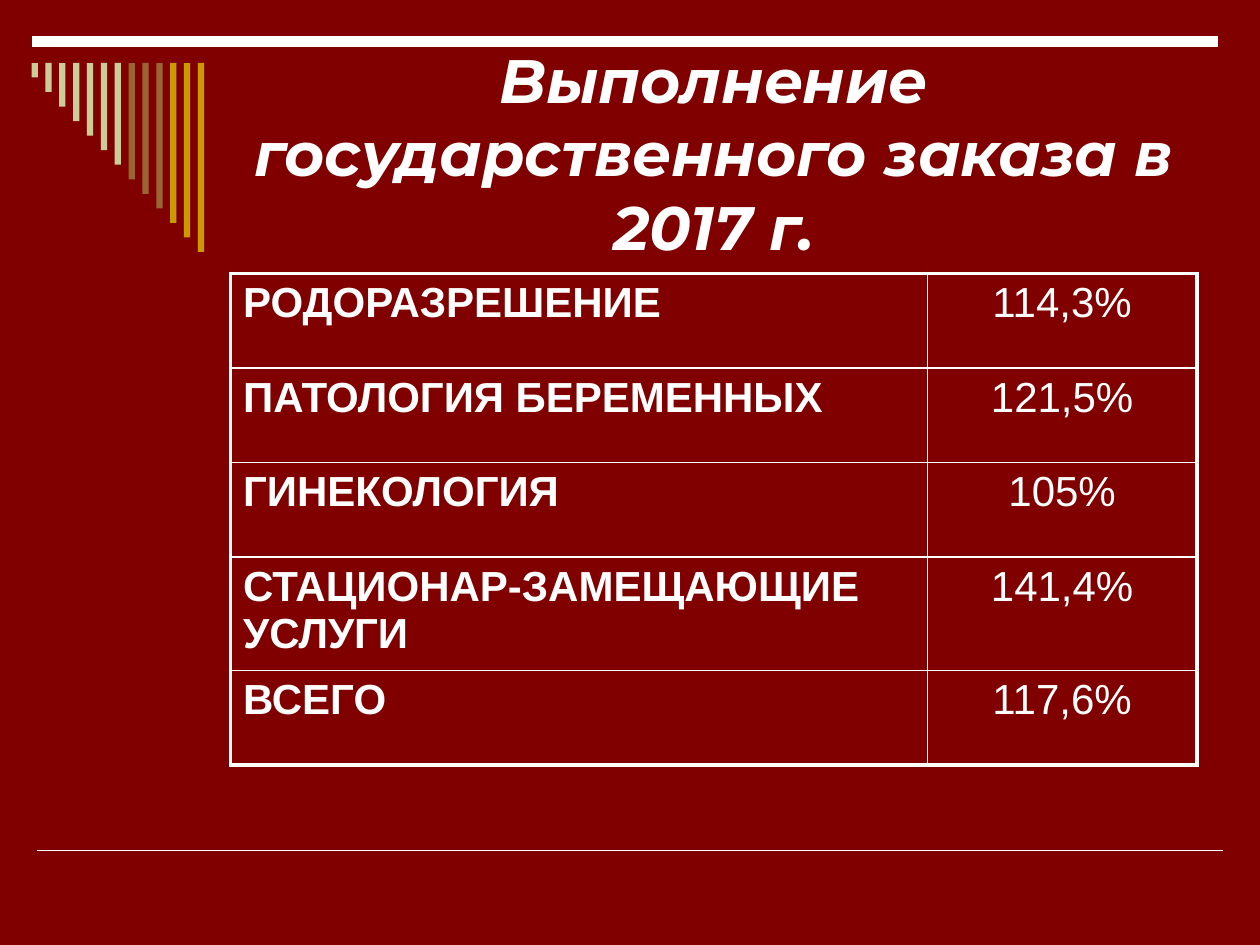
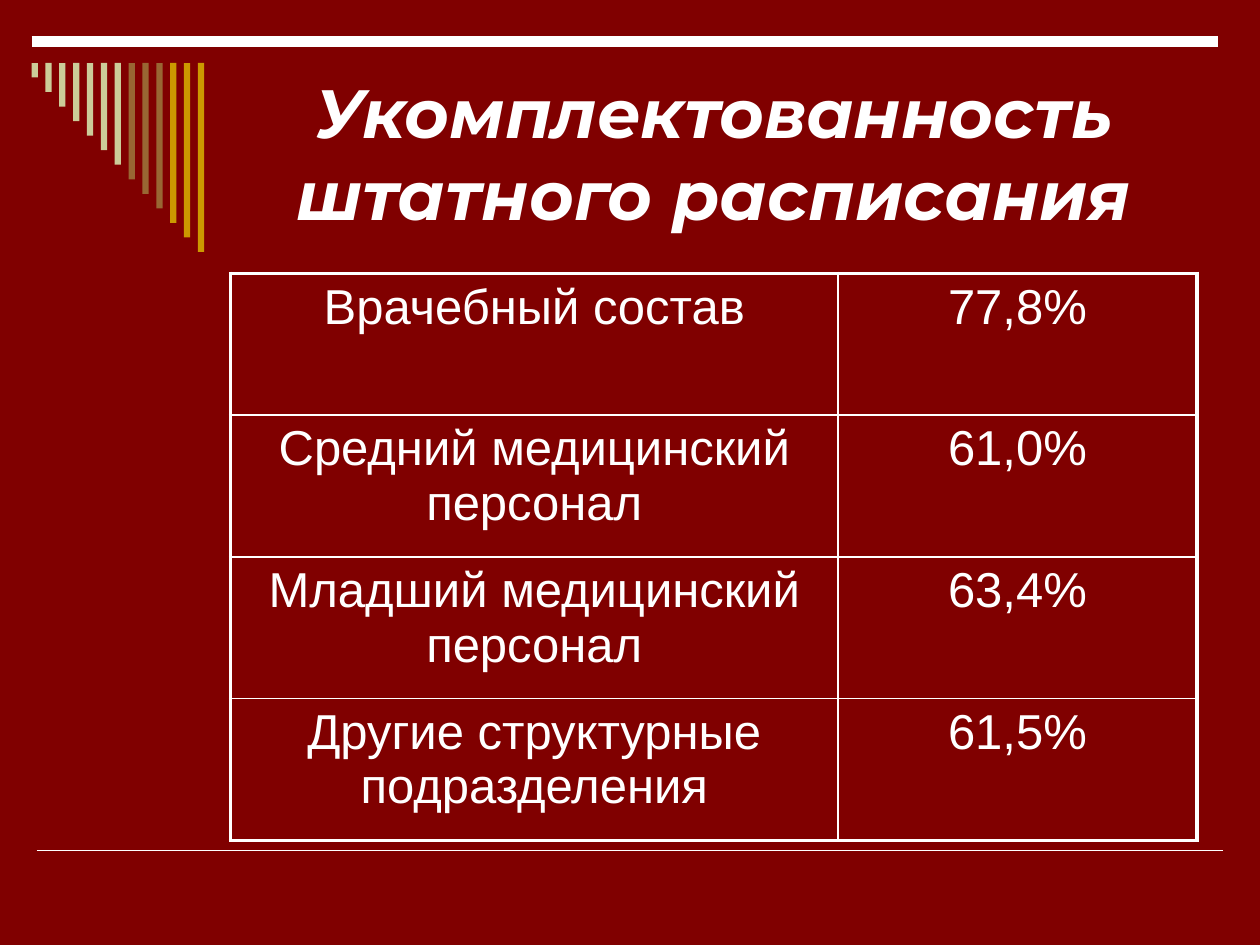
from dataclasses import dataclass
from lxml.etree import SubElement as Sub
from pptx import Presentation as Deck
from pptx.dml.color import RGBColor as Rgb
from pptx.enum.shapes import MSO_CONNECTOR as Link, MSO_SHAPE as Form
from pptx.enum.text import MSO_ANCHOR as Anchor, PP_ALIGN as Align
from pptx.oxml.ns import qn
from pptx.util import Inches, Pt


@dataclass(frozen=True)
class Theme:
    back: str = "800000"
    ink: str = "FFFFFF"
    sand: str = "CCCC99"
    brown: str = "996633"
    gold: str = "CC9900"
    head: str = "Montserrat"
    body: str = "Arial"
    thin: float = 1
    edge: float = 2.25
    band: float = 6


THEME = Theme()
TITLE = (1.83, 0.5, 7.67, 1.42)
STAIR = (0.25, 0.5, 1.37, 1.5)
GRID = (1.83, 2.17)

PAGES = [
    dict(
        title="Выполнение государственного заказа в 2017 г.",
        size=35,
        cols=[5.53, 2.14],
        rows=[0.75, 0.75, 0.75, 0.9, 0.75],
        font=24,
        lead=dict(bold=True, align=Align.LEFT),
        cells=[
            ("РОДОРАЗРЕШЕНИЕ", "114,3%"),
            ("ПАТОЛОГИЯ БЕРЕМЕННЫХ", "121,5%"),
            ("ГИНЕКОЛОГИЯ", "105%"),
            ("СТАЦИОНАР-ЗАМЕЩАЮЩИЕ УСЛУГИ", "141,4%"),
            ("ВСЕГО", "117,6%"),
        ],
    ),
    dict(
        title="Укомплектованность штатного расписания",
        size=39,
        cols=[4.82, 2.85],
        rows=[1.125] * 4,
        font=28,
        lead=dict(bold=False, align=Align.CENTER),
        cells=[
            ("Врачебный состав", "77,8%"),
            ("Средний медицинский персонал", "61,0%"),
            ("Младший медицинский персонал", "63,4%"),
            ("Другие структурные подразделения", "61,5%"),
        ],
    ),
]


def write(frame, text, align, **look):
    para = frame.paragraphs[0]
    para.alignment = align
    run = para.add_run()
    run.text = text
    for key, value in look.items():
        setattr(run.font, key, value)
    run.font.color.rgb = Rgb.from_string(THEME.ink)


def add_rule(slide, left, top, width, weight):
    rule = slide.shapes.add_connector(
        Link.STRAIGHT, *map(Inches, (left, top, left + width, top)))
    rule.line.color.rgb = Rgb.from_string(THEME.ink)
    rule.line.width = Pt(weight)
    Sub(rule._element.spPr, qn("a:effectLst"))


def add_stair(slide, box):
    left, top, width, height = box
    tones = [THEME.sand] * 7 + [THEME.brown] * 3 + [THEME.gold] * 3
    thick = 0.05
    step = (width - thick) / (len(tones) - 1)
    group = slide.shapes.add_group_shape()
    for i, tone in enumerate(tones):
        tall = height * (i + 1) / len(tones)
        bar = group.shapes.add_shape(
            Form.RECTANGLE, *map(Inches, (left + i * step, top, thick, tall)))
        bar.shadow.inherit = False
        bar.fill.solid()
        bar.fill.fore_color.rgb = Rgb.from_string(tone)
        bar.line.fill.background()


def add_title(slide, box, text, size):
    frame = slide.shapes.add_textbox(*map(Inches, box)).text_frame
    frame.word_wrap = True
    frame.vertical_anchor = Anchor.MIDDLE
    write(frame, text, Align.CENTER, name=THEME.head, size=Pt(size),
          bold=True, italic=True)


def set_edges(cell, outer):
    props = cell._tc.get_or_add_tcPr()
    for side, heavy in outer.items():
        weight = THEME.edge if heavy else THEME.thin
        line = Sub(props, qn("a:ln" + side), w=str(Pt(weight)))
        Sub(Sub(line, qn("a:solidFill")), qn("a:srgbClr"), val=THEME.ink)


def add_grid(slide, spot, page):
    cols, rows = page["cols"], page["rows"]
    size = (sum(cols), sum(rows))
    table = slide.shapes.add_table(
        len(rows), len(cols), *map(Inches, spot + size)).table
    table.first_row = table.horz_banding = False
    for col, width in zip(table.columns, cols):
        col.width = Inches(width)
    for row, height in zip(table.rows, rows):
        row.height = Inches(height)
    looks = [page["lead"], dict(bold=False, align=Align.CENTER)]
    for r, line in enumerate(page["cells"]):
        for c, text in enumerate(line):
            cell = table.cell(r, c)
            set_edges(cell, dict(L=c == 0, R=c == len(cols) - 1,
                                 T=r == 0, B=r == len(rows) - 1))
            cell.fill.background()
            write(cell.text_frame, text, name=THEME.body,
                  size=Pt(page["font"]), **looks[c])


def add_frame(slide):
    fill = slide.background.fill
    fill.solid()
    fill.fore_color.rgb = Rgb.from_string(THEME.back)
    add_rule(slide, 0.29, 6.75, 9.42, THEME.thin)
    add_rule(slide, 0.25, 0.33, 9.42, THEME.band)
    add_stair(slide, STAIR)


def main():
    deck = Deck()
    deck.slide_width, deck.slide_height = Inches(10), Inches(7.5)
    for page in PAGES:
        slide = deck.slides.add_slide(deck.slide_layouts[6])
        add_frame(slide)
        add_title(slide, TITLE, page["title"], page["size"])
        add_grid(slide, GRID, page)
    deck.save("out.pptx")


if __name__ == "__main__":
    main()
